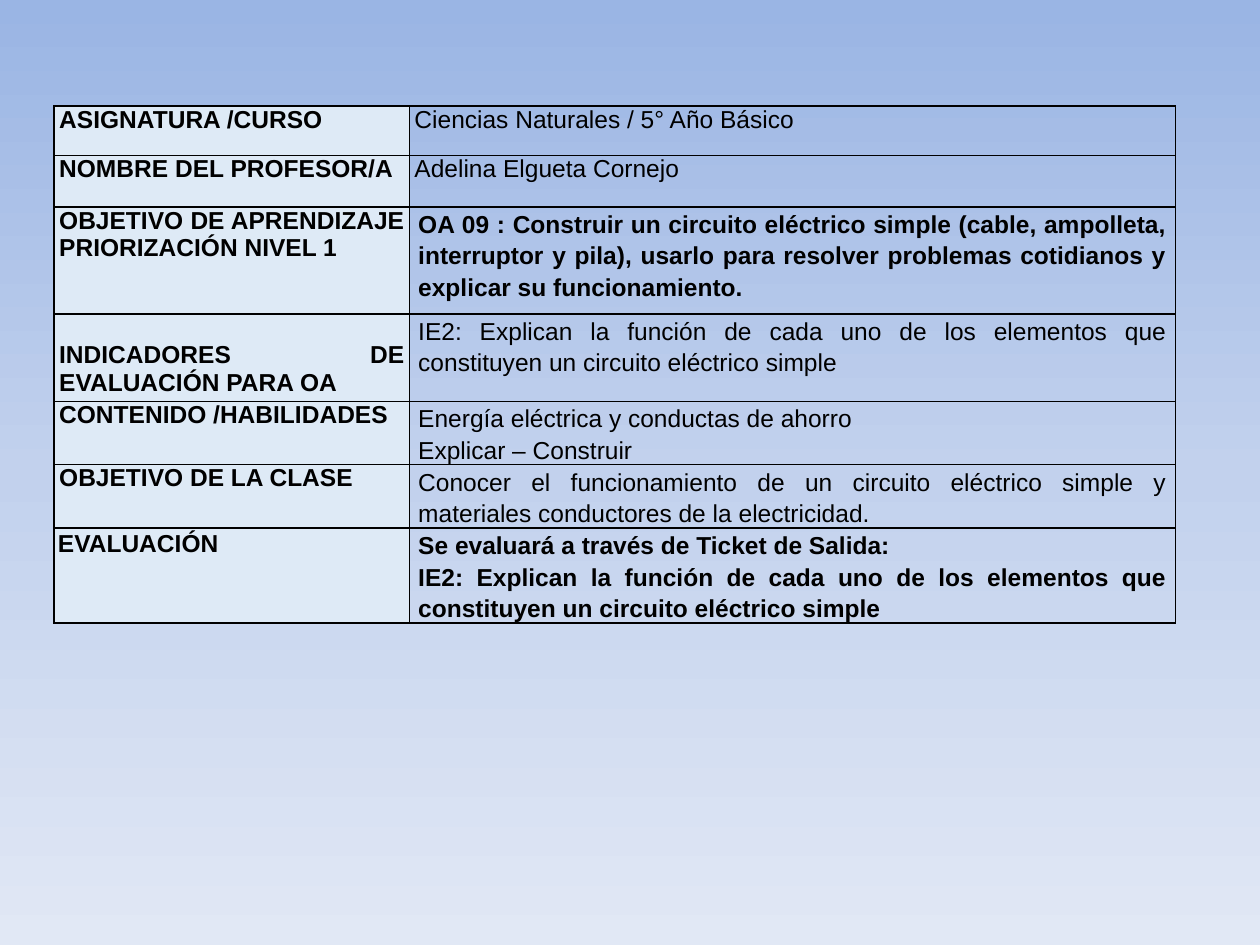
from copy import deepcopy
from dataclasses import dataclass

from lxml.etree import SubElement
from pptx import Presentation
from pptx.dml.color import RGBColor
from pptx.enum.text import PP_ALIGN
from pptx.oxml.ns import qn
from pptx.slide import Slide
from pptx.table import _Cell as Cell
from pptx.util import Inches, Pt

WIDE, HIGH = Inches(10), Inches(7.5)
FONT, SIZE = "Arial", Pt(14)
COLORS = {"ink": "000000", "label": "DEEAF6",
          "top": "9AB5E4", "mid": "C2D1ED", "base": "E1E8F5"}

# Table grid, in percent of the slide's width and height
LEFT, TOP = 4.3, 11.2
COLS = (28.2, 60.8)


@dataclass
class Row:
    high: float              # percent of the slide's height
    label: str
    text: str
    bold: bool = False
    space: float = 1.15      # line spacing of the text
    side: float = 0.07       # side margin of the text, inches
    inset: tuple[float, float] = (0.04, 0)  # side and top margin of the label


ROWS = [
    Row(5.24, "ASIGNATURA /CURSO", "Ciencias Naturales / 5° Año Básico",
        space=1, side=0.04),
    Row(5.45, "NOMBRE DEL PROFESOR/A", "Adelina Elgueta Cornejo",
        space=1, side=0.04),
    Row(11.32, "OBJETIVO DE APRENDIZAJE PRIORIZACIÓN NIVEL 1",
        "OA 09 : Construir un circuito eléctrico simple (cable, ampolleta, "
        "interruptor y pila), usarlo para resolver problemas cotidianos y "
        "explicar su funcionamiento.", bold=True),
    Row(9.26, "INDICADORES DE EVALUACIÓN PARA OA",
        "IE2: Explican la función de cada uno de los elementos que "
        "constituyen un circuito eléctrico simple", inset=(0.04, 0.22)),
    Row(6.6, "CONTENIDO /HABILIDADES",
        "Energía eléctrica y conductas de ahorro\nExplicar – Construir"),
    Row(6.72, "OBJETIVO DE LA CLASE",
        "Conocer el funcionamiento de un circuito eléctrico simple y "
        "materiales conductores de la electricidad."),
    Row(10.05, "EVALUACIÓN",
        "Se evaluará a través de Ticket de Salida:\n"
        "IE2: Explican la función de cada uno de los elementos que "
        "constituyen un circuito eléctrico simple",
        bold=True, inset=(0.03, 0.02)),
]


def color(name: str) -> RGBColor:
    return RGBColor.from_string(COLORS[name])


def across(part: float) -> int:
    return round(WIDE * part / 100)


def down(part: float) -> int:
    return round(HIGH * part / 100)


def paint(slide: Slide) -> None:
    """Give the slide its vertical gradient of three stops."""
    fill = slide.background.fill
    fill.gradient()
    fill.gradient_angle = 270
    first = slide.background._cSld.find(".//" + qn("a:gs"))
    first.addnext(deepcopy(first))
    for stop, name, place in zip(fill.gradient_stops,
                                 ("top", "mid", "base"), (0, 0.5, 1)):
        stop.color.rgb = color(name)
        stop.position = place


def frame(cell: Cell) -> None:
    """Draw a thin line on each side of the cell."""
    props = cell._tc.get_or_add_tcPr()
    for tag in ("a:lnL", "a:lnR", "a:lnT", "a:lnB"):
        line = SubElement(props, qn(tag), w=str(Pt(1)))
        solid = SubElement(line, qn("a:solidFill"))
        SubElement(solid, qn("a:srgbClr"), val=COLORS["ink"])


def write(cell: Cell, text: str, bold: bool, space: float,
          side: float, top: float = 0) -> None:
    frame(cell)
    cell.margin_left = cell.margin_right = Inches(side)
    cell.margin_top, cell.margin_bottom = Inches(top), 0
    cell.text_frame.text = text
    for para in cell.text_frame.paragraphs:
        para.alignment = PP_ALIGN.JUSTIFY
        para.line_spacing = float(space)
        for run in para.runs:
            font = run.font
            font.name, font.size, font.bold = FONT, SIZE, bold
            font.color.rgb = color("ink")


def build(slide: Slide) -> None:
    """Lay out the lesson table."""
    table = slide.shapes.add_table(
        len(ROWS), len(COLS), across(LEFT), down(TOP), across(sum(COLS)),
        down(sum(row.high for row in ROWS))).table
    table.first_row = table.horz_banding = False
    for col, part in zip(table.columns, COLS):
        col.width = across(part)
    for num, row in enumerate(ROWS):
        table.rows[num].height = down(row.high)
        label, text = table.cell(num, 0), table.cell(num, 1)
        write(label, row.label, True, 1, *row.inset)
        label.fill.solid()
        label.fill.fore_color.rgb = color("label")
        write(text, row.text, row.bold, row.space, row.side)
        text.fill.background()


def main() -> None:
    deck = Presentation()
    deck.slide_width, deck.slide_height = WIDE, HIGH
    slide = deck.slides.add_slide(deck.slide_layouts[6])
    paint(slide)
    build(slide)
    deck.save("out.pptx")


if __name__ == "__main__":
    main()
